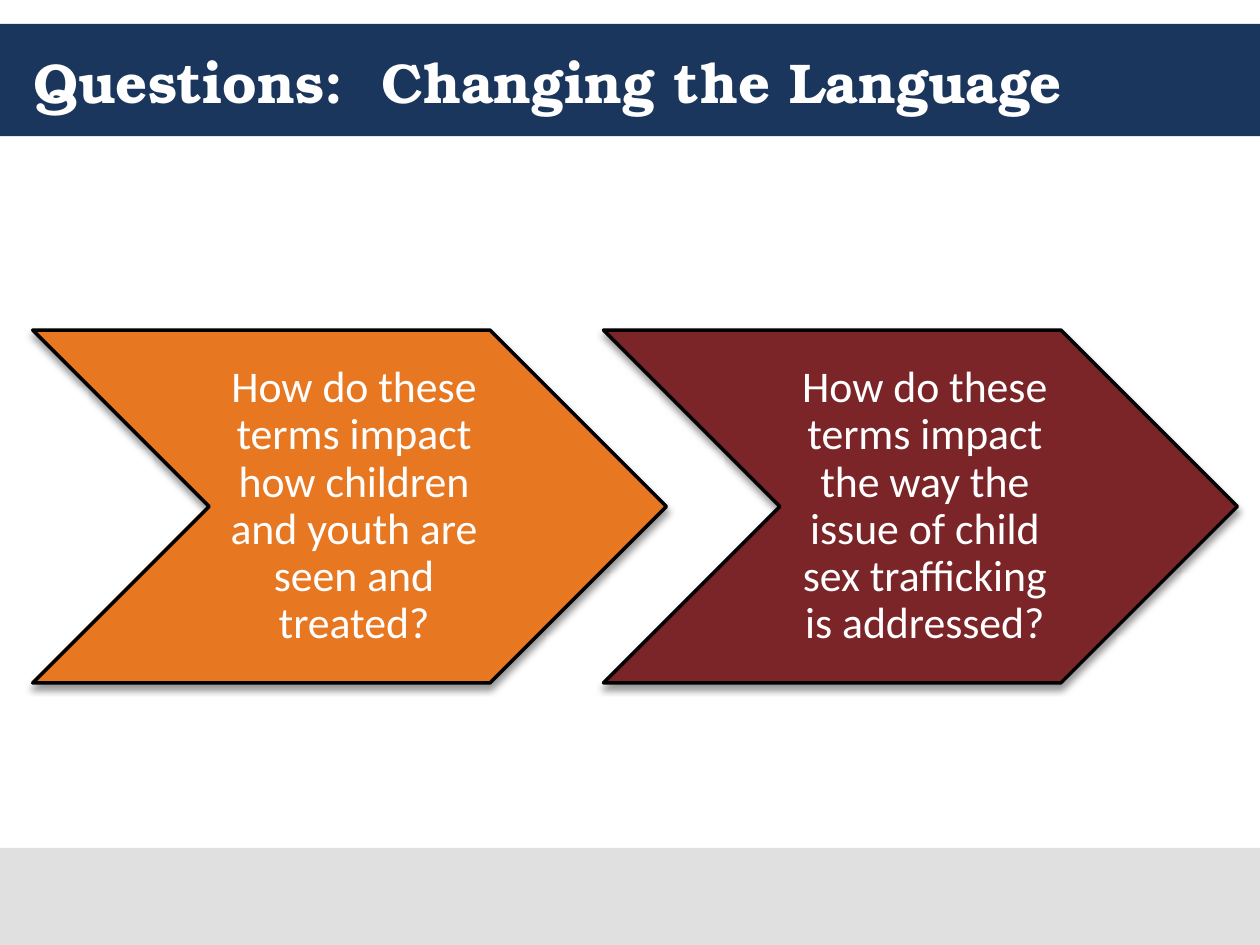
from lxml.etree import SubElement as Sub
from pptx import Presentation
from pptx.dml.color import RGBColor
from pptx.enum.shapes import MSO_SHAPE as Shape
from pptx.enum.text import MSO_ANCHOR as Anchor, PP_ALIGN as Align
from pptx.oxml.ns import qn
from pptx.util import Inches, Pt

WHITE, BLACK = "FFFFFF", "000000"
NAVY, GRAY = "1B365D", "E0E0E0"
ORANGE, MAROON = "E87722", "7C2529"

STEPS = [
    ("How do these terms impact how children and youth are seen and treated?",
     ORANGE),
    ("How do these terms impact the way the issue of child sex trafficking "
     "is addressed?", MAROON),
]
LEFT, TOP, WIDE, HIGH, PITCH = 0.26, 2.62, 5.03, 2.8, 4.53


def color(target, code):
    target.rgb = RGBColor.from_string(code)


def add_shape(slide, kind, box, fill):
    shape = slide.shapes.add_shape(kind, *map(Inches, box))
    shape.shadow.inherit = False
    shape.fill.solid()
    color(shape.fill.fore_color, fill)
    shape.line.fill.background()
    return shape


def add_text(slide, box, text, font, size, pads, bold=False):
    frame = slide.shapes.add_textbox(*map(Inches, box)).text_frame
    frame.word_wrap = True
    frame.vertical_anchor = Anchor.MIDDLE
    (frame.margin_left, frame.margin_top,
     frame.margin_right, frame.margin_bottom) = map(Inches, pads)
    para = frame.paragraphs[0]
    para.text = text
    para.font.name = font
    para.font.size = Pt(size)
    para.font.bold = bold
    color(para.font.color, WHITE)
    return para


def add_shadow(shape):
    effects = shape._element.spPr.find(qn("a:effectLst"))
    shadow = Sub(effects, qn("a:outerShdw"), blurRad=str(Pt(4)),
                 dist=str(Pt(3)), dir=str(90 * 60000), rotWithShape="0")
    shade = Sub(shadow, qn("a:srgbClr"), val=BLACK)
    Sub(shade, qn("a:alpha"), val="40000")


def add_step(slide, left, text, fill):
    arrow = add_shape(slide, Shape.CHEVRON, (left, TOP, WIDE, HIGH), fill)
    color(arrow.line.color, BLACK)
    arrow.line.width = Pt(2)
    add_shadow(arrow)
    # The label fills the body between notch and point
    box = (left + HIGH / 2, TOP, WIDE - HIGH, HIGH)
    para = add_text(slide, box, text, "Calibri", 25, (0.11, 0.04, 0.04, 0.04))
    para.alignment = Align.CENTER
    para.line_spacing = 0.9


def main():
    deck = Presentation()
    deck.slide_width, deck.slide_height = Inches(10), Inches(7.5)
    slide = deck.slides.add_slide(deck.slide_layouts[6])

    # Header and footer bands
    add_shape(slide, Shape.RECTANGLE, (0, 0.19, 10, 0.89), NAVY)
    add_shape(slide, Shape.RECTANGLE, (0, 6.73, 10, 0.77), GRAY)

    # Title
    add_text(slide, (0.17, 0.19, 9.67, 0.9),
             "Questions:  Changing the Language", "TeX Gyre Bonum", 32,
             (0.1, 0.05, 0.1, 0.05), bold=True)

    # Question arrows
    for i, (text, fill) in enumerate(STEPS):
        add_step(slide, LEFT + i * PITCH, text, fill)

    deck.save("out.pptx")


if __name__ == "__main__":
    main()
